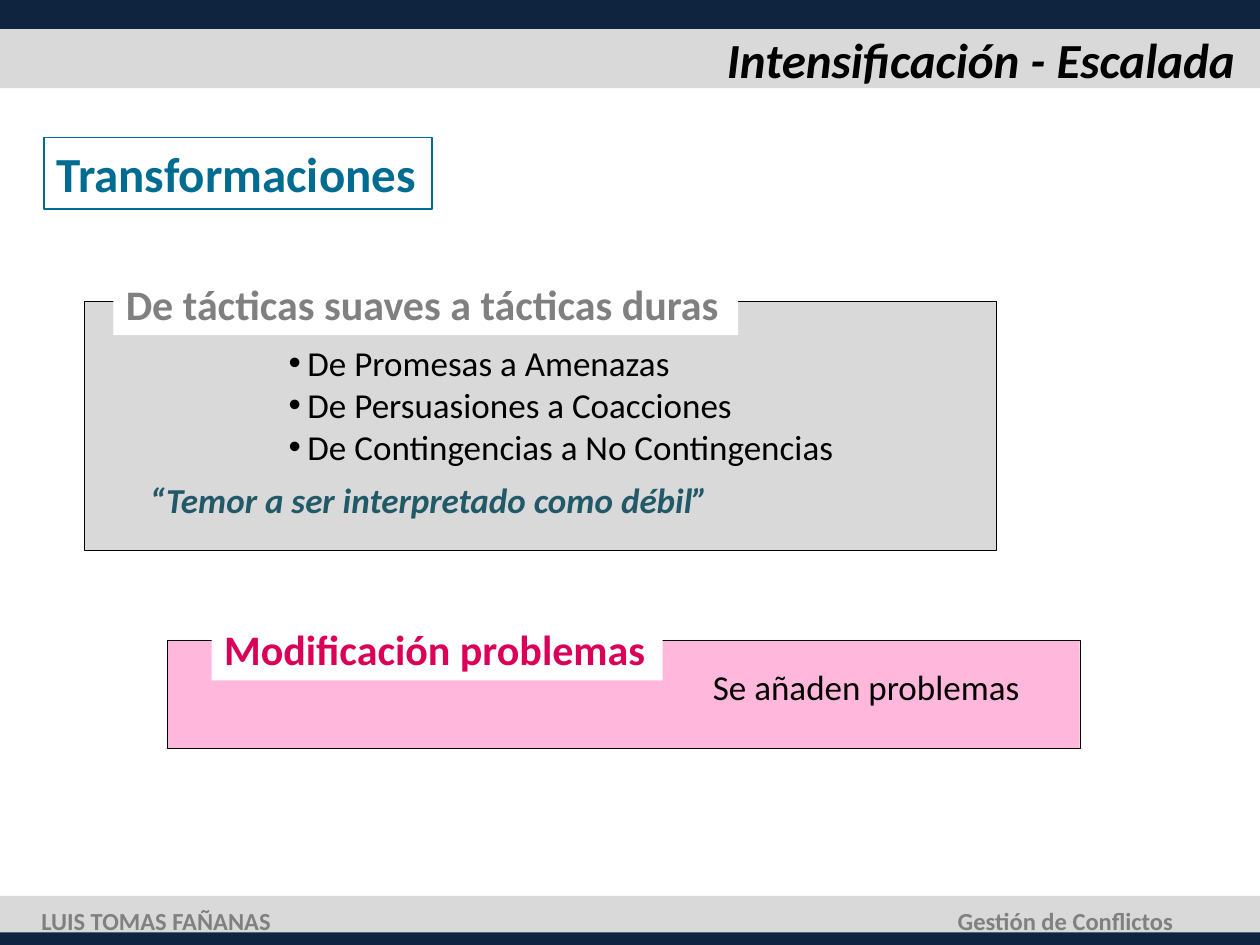
from dataclasses import dataclass
from typing import Optional

from lxml.etree import SubElement
from pptx import Presentation
from pptx.dml.color import RGBColor as Rgb
from pptx.enum.shapes import MSO_SHAPE as Shape
from pptx.enum.text import MSO_ANCHOR as Anchor, MSO_AUTO_SIZE as Auto, PP_ALIGN as Align
from pptx.oxml.ns import qn
from pptx.util import Inches, Pt

HUES = {
    "navy": "0F243E", "grey": "D9D9D9", "white": "FFFFFF", "black": "000000",
    "teal": "006C92", "slate": "808080", "deep": "215968",
    "pink": "FFB7DB", "rose": "DA0058",
}


@dataclass
class Box:
    """A filled or outlined rectangle."""
    at: tuple
    fill: Optional[str] = None
    line: Optional[str] = None
    width: float = 0.25


@dataclass
class Label:
    """A line of text with its look."""
    at: tuple
    text: str
    size: int
    hue: str
    bold: bool = True
    slant: bool = False
    align: Align = Align.LEFT
    anchor: Anchor = Anchor.TOP


BANDS = [
    Box((0, 0, 10, 0.7), "grey"),
    Box((0, 0, 10, 0.23), "navy"),
    Box((0, 7.11, 10, 0.34), "grey"),
    Box((0, 7.4, 10, 0.1), "navy"),
]
PANELS = [
    Box((0.35, 1.09, 3.08, 0.57), None, "teal", 0.75),
    Box((0.67, 2.39, 7.24, 1.98), "grey", "black"),
    Box((0.9, 2.16, 4.96, 0.5), "white"),
    Box((1.33, 5.08, 7.24, 0.86), "pink", "black"),
    Box((1.68, 4.9, 3.58, 0.5), "white"),
]
LABELS = [
    Label(PANELS[0].at, "Transformaciones", 28, "teal"),
    Label(PANELS[2].at, "De tácticas suaves a tácticas duras", 24, "slate"),
    Label((1.09, 3.75, 4.69, 0.44), "“Temor a ser interpretado como débil”", 20, "deep", slant=True),
    Label(PANELS[4].at, "Modificación problemas", 24, "rose"),
    Label((5.56, 5.23, 2.7, 0.44), "Se añaden problemas", 20, "black", bold=False),
    Label((0.23, 7.14, 2.04, 0.34), "LUIS TOMAS FAÑANAS", 14, "slate", anchor=Anchor.MIDDLE),
    Label((7.48, 7.14, 1.93, 0.34), "Gestión de Conflictos", 14, "slate",
          align=Align.RIGHT, anchor=Anchor.MIDDLE),
]
HEAD = Label((1.87, 0.23, 8.03, 0.48), "Intensificación - Escalada", 28, "black",
             slant=True, align=Align.RIGHT, anchor=Anchor.MIDDLE)
LIST = Label((2.19, 2.66, 5.63, 1.11),
             "De Promesas a Amenazas\nDe Persuasiones a Coacciones\nDe Contingencias a No Contingencias",
             20, "black", bold=False)


def tint(name: str) -> Rgb:
    """Return the colour of that name."""
    return Rgb.from_string(HUES[name])


def draw_box(slide, box: Box) -> None:
    """Add a rectangle."""
    shape = slide.shapes.add_shape(Shape.RECTANGLE, *map(Inches, box.at))
    shape.shadow.inherit = False
    if box.fill:
        shape.fill.solid()
        shape.fill.fore_color.rgb = tint(box.fill)
    else:
        shape.fill.background()
    if box.line:
        shape.line.color.rgb = tint(box.line)
        shape.line.width = Pt(box.width)
    else:
        shape.line.fill.background()


def add_dot(para) -> None:
    """Give a paragraph a bullet with a hanging indent."""
    props = para._p.get_or_add_pPr()
    props.set("marL", str(Inches(0.15)))
    props.set("indent", str(-Inches(0.15)))
    SubElement(props, qn("a:buFont"), typeface="Arial")
    SubElement(props, qn("a:buChar"), char="•")


def set_text(shape, label: Label, dots: bool = False) -> None:
    """Place a shape and write its text."""
    shape.left, shape.top, shape.width, shape.height = map(Inches, label.at)
    frame = shape.text_frame
    frame.text = label.text
    frame.word_wrap = True
    frame.auto_size = Auto.NONE
    frame.vertical_anchor = label.anchor
    for para in frame.paragraphs:
        para.alignment = label.align
        para.space_before = Pt(0)
        if dots:
            add_dot(para)
        for run in para.runs:
            font = run.font
            font.name, font.size = "Calibri", Pt(label.size)
            font.bold, font.italic = label.bold, label.slant
            font.color.rgb = tint(label.hue)


def main() -> None:
    """Build the slide and save it."""
    deck = Presentation()
    deck.slide_width, deck.slide_height = Inches(10), Inches(7.5)
    slide = deck.slides.add_slide(deck.slide_layouts[1])
    for box in BANDS + PANELS:
        draw_box(slide, box)
    title, body = slide.shapes.title, slide.placeholders[1]
    for shape in (title, body):
        shape.element.getparent().append(shape.element)
    set_text(title, HEAD)
    set_text(body, LIST, dots=True)
    for label in LABELS:
        set_text(slide.shapes.add_textbox(*map(Inches, label.at)), label)
    deck.save("out.pptx")


if __name__ == "__main__":
    main()
